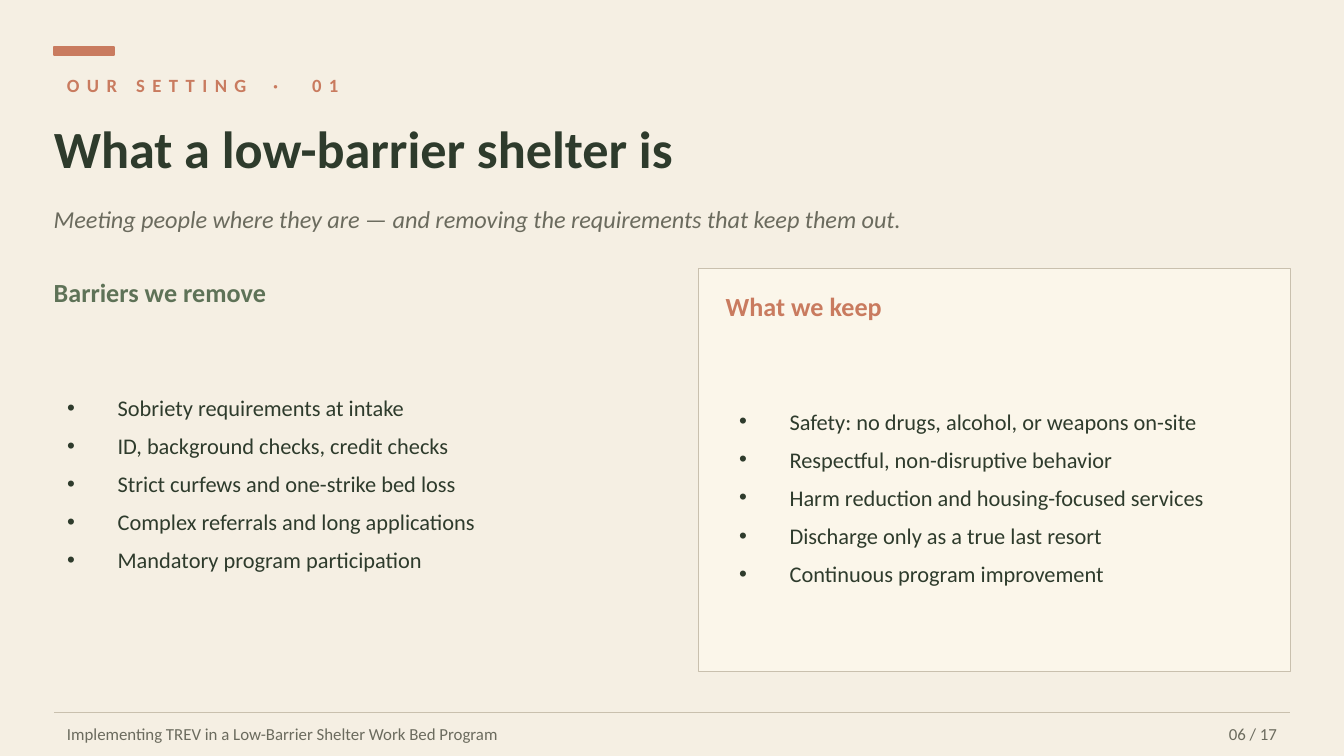
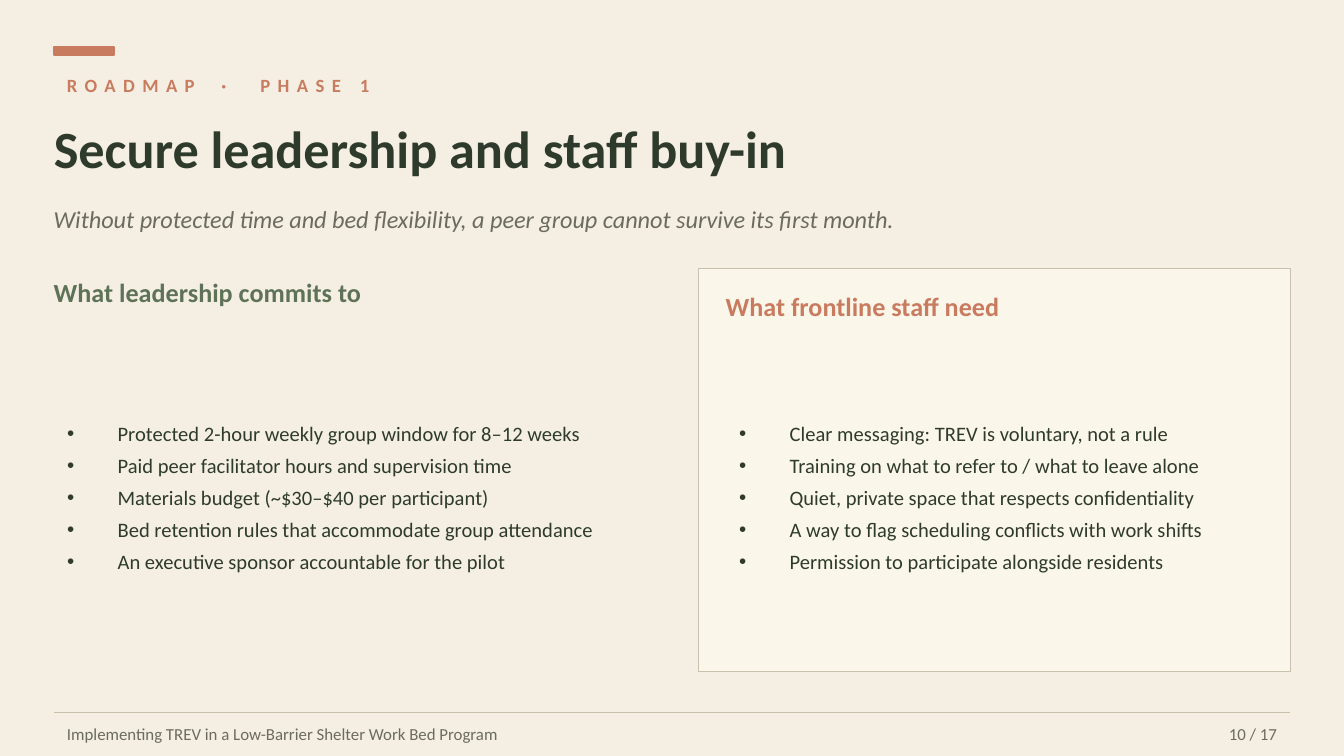
"""Build two shelter programme slides that share one two-column frame."""
from dataclasses import dataclass
from typing import NamedTuple

from lxml import etree
from pptx import Presentation
from pptx import util as u
from pptx.dml.color import RGBColor
from pptx.enum import shapes, text
from pptx.oxml.ns import qn

PX = u.Inches(1) // 200
FONT = "Calibri"
FOOT = "Implementing TREV in a Low-Barrier Shelter Work Bed Program"
TOTAL = 17
INDENT = 75
HUES = {
    "paper": "F5EFE3",
    "card": "FBF6EA",
    "rule": "C9C0AE",
    "clay": "C97B5F",
    "ink": "2E3B2C",
    "sage": "5E7257",
    "mute": "6B6B5E",
}


class Box(NamedTuple):
    """Hold a place and size in px."""

    x: int
    y: int
    w: int
    h: int


BAR = Box(80, 70, 90, 12)
LABEL = Box(80, 96, 1200, 60)
TITLE = Box(80, 150, 1840, 140)
LEAD = Box(80, 280, 1840, 90)
CARD = Box(1040, 400, 880, 600)
NOTE = Box(80, 1064, 1500, 56)
COUNT = Box(1760, 1064, 160, 56)
HEAD = 70
RULE = 1060


@dataclass
class Column:
    """Describe a heading and the list below it."""

    head: str
    items: list[str]
    high: int = 500


@dataclass
class Page:
    """Describe what differs from slide to slide."""

    num: int
    label: tuple[str, str]
    title: str
    lead: str
    left: Column
    right: Column
    size: int
    gap: int


PAGES = [
    Page(
        6,
        ("OUR SETTING", "01"),
        "What a low-barrier shelter is",
        "Meeting people where they are — and removing the requirements that keep them out.",
        Column("Barriers we remove", [
            "Sobriety requirements at intake",
            "ID, background checks, credit checks",
            "Strict curfews and one-strike bed loss",
            "Complex referrals and long applications",
            "Mandatory program participation",
        ]),
        Column("What we keep", [
            "Safety: no drugs, alcohol, or weapons on-site",
            "Respectful, non-disruptive behavior",
            "Harm reduction and housing-focused services",
            "Discharge only as a true last resort",
            "Continuous program improvement",
        ]),
        size=12,
        gap=6,
    ),
    Page(
        10,
        ("ROADMAP", "PHASE 1"),
        "Secure leadership and staff buy-in",
        "Without protected time and bed flexibility, a peer group cannot survive its first month.",
        Column("What leadership commits to", [
            "Protected 2-hour weekly group window for 8–12 weeks",
            "Paid peer facilitator hours and supervision time",
            "Materials budget (~$30–$40 per participant)",
            "Bed retention rules that accommodate group attendance",
            "An executive sponsor accountable for the pilot",
        ], high=540),
        Column("What frontline staff need", [
            "Clear messaging: TREV is voluntary, not a rule",
            "Training on what to refer to / what to leave alone",
            "Quiet, private space that respects confidentiality",
            "A way to flag scheduling conflicts with work shifts",
            "Permission to participate alongside residents",
        ]),
        size=11,
        gap=4,
    ),
]


def hue(name: str) -> RGBColor:
    """Look up a colour by name."""
    return RGBColor.from_string(HUES[name])


def emu(box: Box) -> list[int]:
    """Turn a box in px into EMU lengths."""
    return [n * PX for n in box]


def write(slide, words: str | list, box: Box, *, holder=None, size: int = 9,
          color: str = "mute", bold: bool = False, italic: bool = False,
          align: str = "LEFT", pad: bool = False, gap: int = 0,
          bullet: bool = False) -> None:
    """Write paragraphs, each a string or (string, tracking) runs, in a box."""
    shape = holder or slide.shapes.add_textbox(*emu(box))
    shape.left, shape.top, shape.width, shape.height = emu(box)
    shape.element.getparent().append(shape.element)
    frame = shape.text_frame
    frame.word_wrap = True
    frame.auto_size = text.MSO_AUTO_SIZE.NONE
    frame.vertical_anchor = text.MSO_ANCHOR.MIDDLE
    frame.margin_left = frame.margin_right = 20 * PX * pad
    frame.margin_top = frame.margin_bottom = 10 * PX * pad
    for i, line in enumerate([words] if isinstance(words, str) else words):
        para = frame.add_paragraph() if i else frame.paragraphs[0]
        para.alignment = getattr(text.PP_ALIGN, align)
        para.space_before, para.space_after = u.Pt(0), u.Pt(gap)
        if bullet:
            prop = para._p.get_or_add_pPr()
            prop.set("marL", str(INDENT * PX))
            prop.set("indent", str(-INDENT * PX))
            etree.SubElement(prop, qn("a:buChar")).set("char", "•")
        for part, track in [(line, 0)] if isinstance(line, str) else line:
            run = para.add_run()
            run.text = part
            font = run.font
            font.name, font.size = FONT, u.Pt(size)
            font.bold, font.italic = bold, italic
            font.color.rgb = hue(color)
            if track:
                run._r.get_or_add_rPr().set("spc", str(track * 100))


def block(slide, box: Box, fill: str, line: str, width: float) -> None:
    """Draw a flat rectangle."""
    rect = slide.shapes.add_shape(shapes.MSO_SHAPE.RECTANGLE, *emu(box))
    rect.shadow.inherit = False
    rect.fill.solid()
    rect.fill.fore_color.rgb = hue(fill)
    rect.line.color.rgb = hue(line)
    rect.line.width = u.Pt(width)


def rule(slide) -> None:
    """Draw the line above the footer."""
    line = slide.shapes.add_connector(
        shapes.MSO_CONNECTOR.STRAIGHT, TITLE.x * PX, RULE * PX,
        (TITLE.x + TITLE.w) * PX, RULE * PX)
    line.line.color.rgb = hue("rule")
    line.line.width = u.Pt(0.75)
    etree.SubElement(line.element.spPr, qn("a:effectLst"))


def column(slide, page: Page, col: Column, box: Box, color: str, idx: int) -> None:
    """Write a heading and its bullet list from the top of a box."""
    write(slide, col.head, box._replace(h=HEAD), size=14, color=color, bold=True)
    write(slide, col.items, box._replace(y=box.y + HEAD, h=col.high),
          holder=slide.placeholders[idx], size=page.size, color="ink",
          pad=True, gap=page.gap, bullet=True)


def build(deck, page: Page) -> None:
    """Add one slide."""
    slide = deck.slides.add_slide(deck.slide_layouts.get_by_name("Two Content"))
    block(slide, BAR, "clay", "clay", 1)
    rule(slide)
    write(slide, FOOT, NOTE, pad=True)
    first, last = page.label
    write(slide, [[(first, 4), (" · ", 8), (last, 4)]], LABEL,
          size=10, color="clay", bold=True, pad=True)
    write(slide, page.title, TITLE, holder=slide.shapes.title,
          size=28, color="ink", bold=True)
    write(slide, page.lead, LEAD, size=13, italic=True)
    column(slide, page, page.left, Box(80, 400, 920, 0), "sage", 1)
    block(slide, CARD, "card", "rule", 0.5)
    inner = Box(CARD.x + 40, CARD.y + 20, CARD.w - 80, 0)
    column(slide, page, page.right, inner, "clay", 2)
    write(slide, f"{page.num:02} / {TOTAL}", COUNT, align="RIGHT", pad=True)


def main() -> None:
    """Build and save the deck."""
    deck = Presentation()
    deck.slide_width, deck.slide_height = 2000 * PX, 1125 * PX
    back = deck.slide_master.background.fill
    back.solid()
    back.fore_color.rgb = hue("paper")
    for page in PAGES:
        build(deck, page)
    deck.save("out.pptx")


if __name__ == "__main__":
    main()
